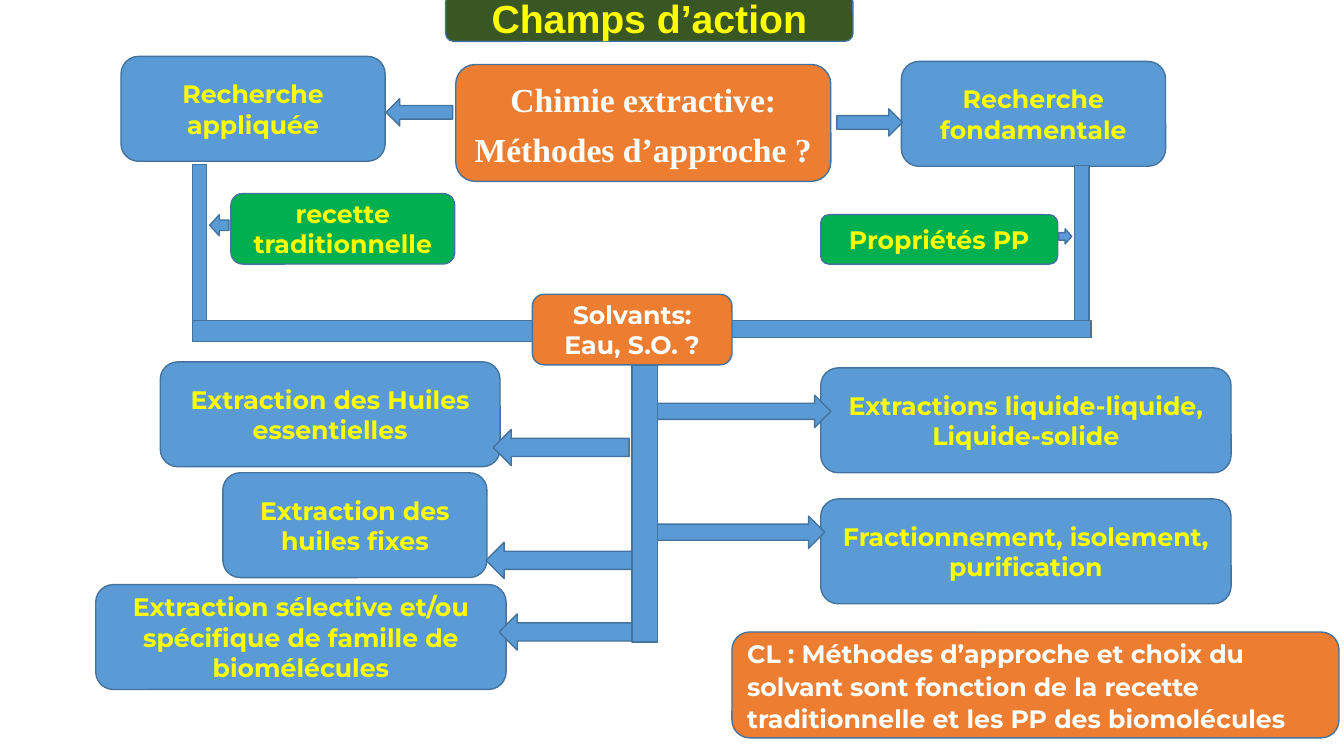
from pptx import Presentation
from pptx.dml.color import RGBColor
from pptx.enum.shapes import MSO_SHAPE as Kind
from pptx.enum.text import MSO_ANCHOR as Anchor, PP_ALIGN as Align
from pptx.util import Inches, Pt

BLUE, ORANGE, GREEN, DARK = "5B9BD5", "ED7D31", "00B050", "385723"
EDGE, YELLOW, WHITE = "43739E", "FFFF00", "FFFFFF"

deck = Presentation()
deck.slide_width, deck.slide_height = Inches(13.33), Inches(7.5)
slide = deck.slides.add_slide(deck.slide_layouts[6])


def paint(part, color):
    part.solid()
    part.fore_color.rgb = RGBColor.from_string(color)


def draw(text, at, kind=Kind.ROUNDED_RECTANGLE, fill=BLUE, color=YELLOW,
         size=18, font="Montserrat", align=Align.CENTER, line=1.0, gap=0):
    shape = slide.shapes.add_shape(kind, *map(Inches, at))
    shape.shadow.inherit = False
    paint(shape.fill, fill)
    paint(shape.line.fill, EDGE)
    shape.line.width = Pt(1)
    if not text:
        return
    frame = shape.text_frame
    frame.word_wrap = True
    frame.vertical_anchor = Anchor.MIDDLE
    for i, words in enumerate(text.split("\n")):
        para = frame.paragraphs[0] if i == 0 else frame.add_paragraph()
        para.alignment = align
        para.line_spacing = line
        if i:
            para.space_before = Pt(gap)
        run = para.add_run()
        run.text = words
        run.font.name, run.font.size, run.font.bold = font, Pt(size), True
        paint(run.font.fill, color)


draw("Chimie extractive:\nMéthodes d’approche ?", (4.52, 0.64, 3.72, 1.16),
     fill=ORANGE, color=WHITE, size=24, font="Times New Roman", line=1.07, gap=5)
draw("Champs d’action", (4.42, -0.06, 4.04, 0.47), fill=DARK, size=28, font="Arial")

topics = [
    ("Recherche appliquée", 1.2, 0.56, 2.62),
    ("Recherche fondamentale", 8.94, 0.61, 2.62),
    ("Extraction des Huiles essentielles", 1.59, 3.59, 3.37),
    ("Extraction des huiles fixes", 2.21, 4.69, 2.62),
    ("Extraction sélective et/ou spécifique de famille de biomélécules", 0.95, 5.8, 4.07),
    ("Extractions liquide-liquide,\nLiquide-solide", 8.14, 3.65, 4.07),
    ("Fractionnement, isolement, purification", 8.14, 4.95, 4.07),
]
for text, left, top, width in topics:
    draw(text, (left, top, width, 1.04))

arrows = {
    Kind.LEFT_ARROW: [
        (3.83, 0.98, 0.66, 0.27),
        (4.89, 4.26, 1.35, 0.36),
        (4.82, 5.38, 1.48, 0.36),
        (4.95, 6.09, 1.35, 0.36),
        (2.08, 2.13, 0.19, 0.21),
    ],
    Kind.RIGHT_ARROW: [
        (8.3, 1.08, 0.65, 0.27),
        (6.44, 5.12, 1.74, 0.32),
        (6.5, 3.92, 1.74, 0.32),
        (10.5, 2.27, 0.13, 0.15),
    ],
    Kind.RECTANGLE: [
        (6.27, 3.62, 0.25, 2.75),
        (10.66, 1.64, 0.14, 1.55),
        (1.91, 1.63, 0.14, 1.55),
        (7, 3.18, 3.82, 0.17),
        (1.91, 3.18, 3.45, 0.21),
    ],
}
for kind, spots in arrows.items():
    for at in spots:
        draw("", at, kind=kind)

draw("recette traditionnelle", (2.29, 1.92, 2.22, 0.7), fill=GREEN)
draw("Propriétés PP", (8.14, 2.13, 2.35, 0.49), fill=GREEN)
draw("Solvants:\nEau, S.O. ?", (5.28, 2.92, 1.98, 0.7), fill=ORANGE, color=WHITE)
draw("CL : Méthodes d’approche et choix du solvant sont fonction de la recette "
     "traditionnelle et les PP des biomolécules", (7.26, 6.27, 6.02, 1.05),
     fill=ORANGE, color=WHITE, align=Align.LEFT, line=1.07)

deck.save("out.pptx")
